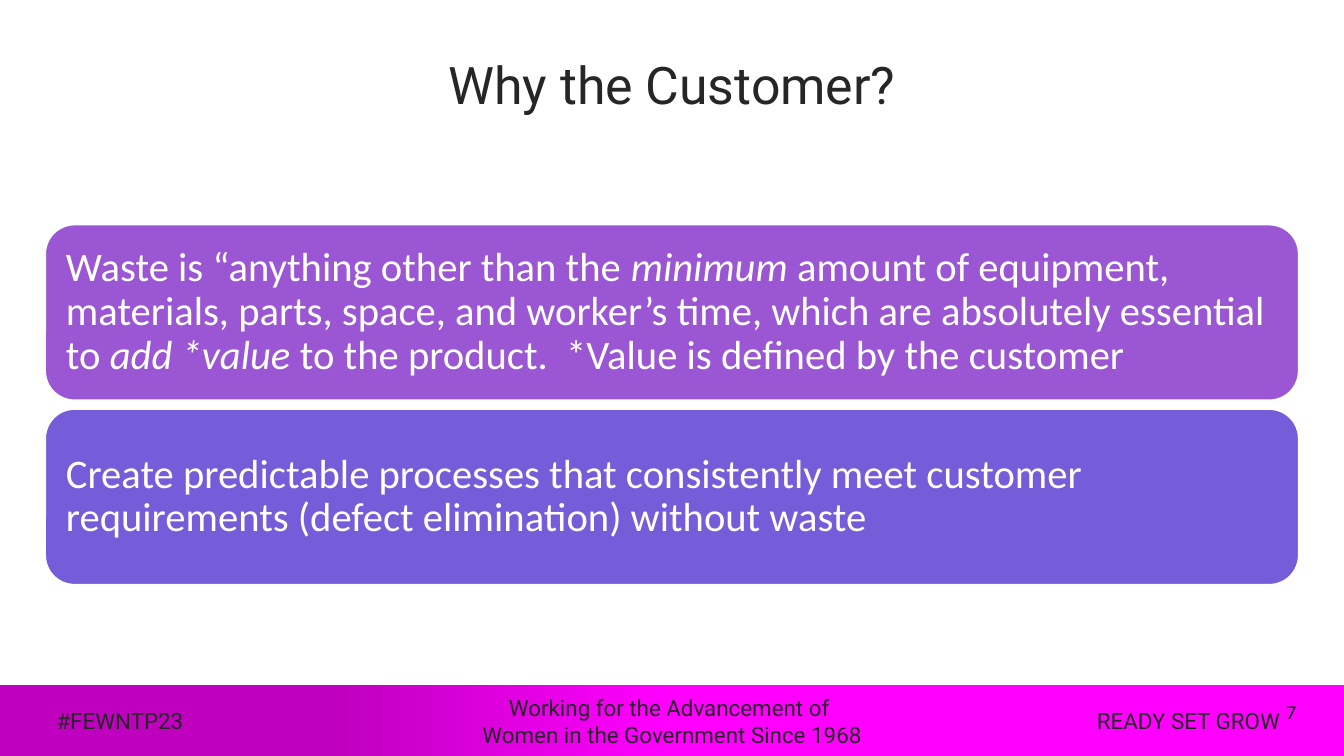
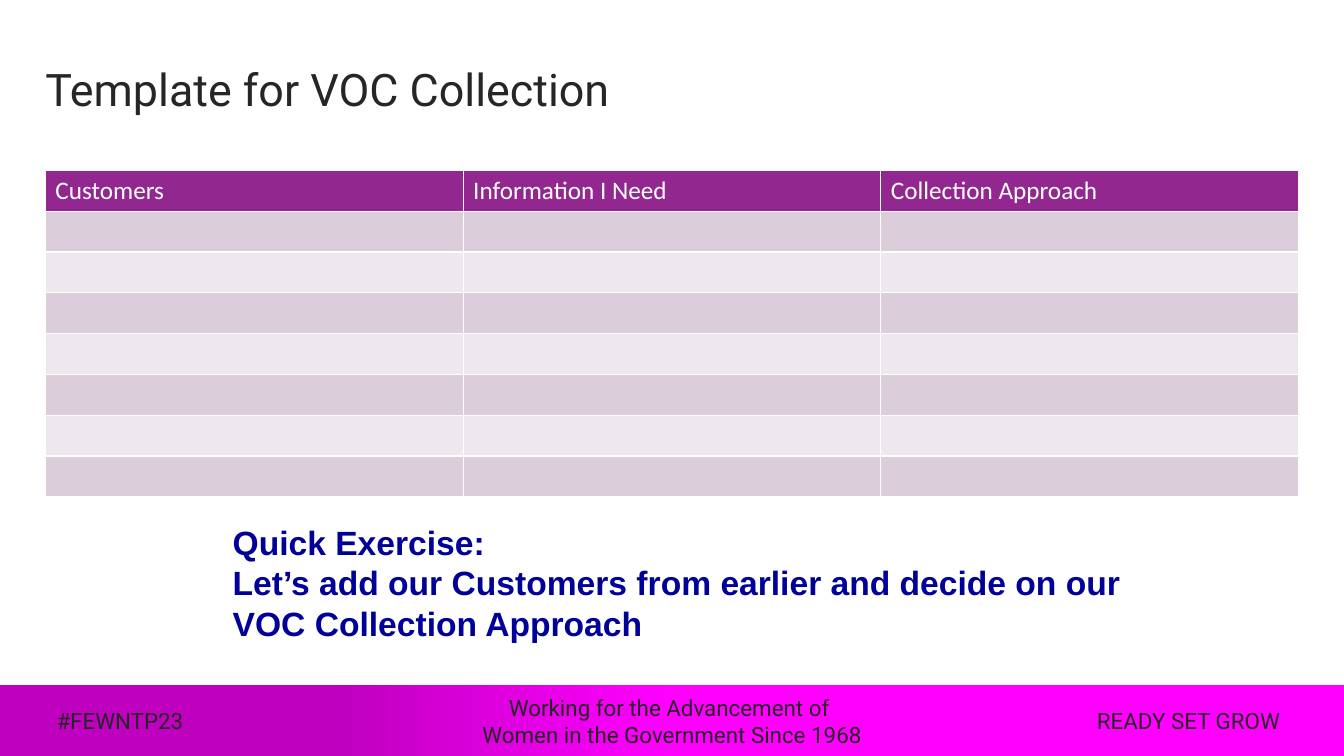
import pptx
import pptx.util
import pptx.dml.color
import pptx.enum.shapes
import pptx.enum.text
import pptx.oxml.ns
import lxml.etree

Inches, Pt = pptx.util.Inches, pptx.util.Pt
ALIGN = pptx.enum.text.PP_ALIGN
ANCHOR = pptx.enum.text.MSO_ANCHOR
SHAPE = pptx.enum.shapes.MSO_SHAPE
qn = pptx.oxml.ns.qn

LEFT, WIDTH = 0.45, 12.43
DARK, WHITE = "262626", "FFFFFF"
BAND_STOPS = [(0, "BF00BF"), (25, "BF00BF"), (50, "FF00FF"), (100, "FF00FF")]
FOOTER_FONT = {"name": "Roboto", "size": Pt(16), "color": DARK}
FOOTERS = [
    (0.36, 1.66, ALIGN.CENTER, ["#FEWNTP23"]),
    (4.39, 4.55, ALIGN.CENTER, ["Working for the Advancement of ", "Women in the Government Since 1968"]),
    (10.68, 2.29, ALIGN.LEFT, ["READY SET GROW"]),
]

CARD_FONT = {"name": "Calibri", "size": Pt(29), "color": WHITE}
CARD_TOP, CARD_HEIGHT, CARD_PITCH = 2.23, 1.74, 1.83
CARDS = [
    ("9B57D3", [
        ("Waste is “anything other than the ", False),
        ("minimum", True),
        (" amount of equipment, materials, parts, space, and worker’s time, "
         "which are absolutely essential to ", False),
        ("add *value", True),
        (" to the product.  *Value is defined by the customer", False),
    ]),
    ("755DD9", [
        ("Create predictable processes that consistently meet customer "
         "requirements (defect elimination) without waste", False),
    ]),
]
PAGE_FONT = {"name": "Calibri", "size": Pt(13.9), "color": "000000"}

HEADERS = ["Customers", "Information I Need", "Collection Approach"]
BLANK_ROWS = 7
HEADER_FILL, ROW_FILLS = "92278F", ["DCCDDB", "EEE8EE"]
TABLE_FONT = {"name": "Calibri", "size": Pt(18), "bold": False, "color": WHITE}
EXERCISE = [
    "Quick Exercise:",
    "Let’s add our Customers from earlier and decide on our VOC Collection Approach",
]
EXERCISE_FONT = {"name": "Arial", "size": Pt(24), "bold": True, "color": "000099"}


def rgb(value):
    return pptx.dml.color.RGBColor.from_string(value)


def box(left, top, width, height):
    return [Inches(v) for v in (left, top, width, height)]


def set_font(font, fmt):
    for key, value in fmt.items():
        if key == "color":
            font.color.rgb = rgb(value)
        else:
            setattr(font, key, value)


def set_frame(tf, inset, anchor, wrap=True):
    tf.word_wrap = wrap
    tf.vertical_anchor = anchor
    for side in ("left", "top", "right", "bottom"):
        setattr(tf, "margin_" + side, Inches(inset))


def write(tf, paragraphs, fmt, align=ALIGN.LEFT, line_spacing=None):
    for i, runs in enumerate(paragraphs):
        p = tf.add_paragraph() if i else tf.paragraphs[0]
        p.alignment = align
        if line_spacing:
            p.line_spacing = line_spacing
        for text, italic in ([(runs, False)] if isinstance(runs, str) else runs):
            r = p.add_run()
            r.text = text
            set_font(r.font, fmt)
            if italic:
                r.font.italic = True


def add_solid(fill, color):
    fill.solid()
    fill.fore_color.rgb = rgb(color)


def add_band(slide):
    sp = slide.shapes.add_shape(SHAPE.RECTANGLE, *box(0, 6.8, 13.33, 0.7))
    sp.shadow.inherit = False
    sp.line.fill.background()
    sp.fill.gradient()
    sp.fill.gradient_angle = 0
    stops = next(sp.element.iter(qn("a:gsLst")))
    for stop in list(stops):
        stops.remove(stop)
    for position, color in BAND_STOPS:
        stop = lxml.etree.SubElement(stops, qn("a:gs"), pos=str(position * 1000))
        lxml.etree.SubElement(stop, qn("a:srgbClr"), val=color)


def add_slide(prs, title, size, align):
    slide = prs.slides.add_slide(prs.slide_layouts[5])
    add_band(slide)
    for left, width, footer_align, lines in FOOTERS:
        tf = slide.shapes.add_textbox(*box(left, 6.94, width, 0.42)).text_frame
        set_frame(tf, 0.2, ANCHOR.MIDDLE, wrap=False)
        write(tf, lines, FOOTER_FONT, footer_align)
    sp = slide.shapes.title
    sp.left, sp.top, sp.width, sp.height = box(LEFT, 0.31, WIDTH, 0.84)
    sp.text_frame.auto_size = pptx.enum.text.MSO_AUTO_SIZE.NONE
    set_frame(sp.text_frame, 0, ANCHOR.BOTTOM)
    fmt = {"name": "Roboto", "size": Pt(size), "color": DARK}
    write(sp.text_frame, [title], fmt, align, 0.9)
    return slide


def add_cards(slide):
    for i, (color, runs) in enumerate(CARDS):
        top = CARD_TOP + i * CARD_PITCH
        sp = slide.shapes.add_shape(SHAPE.ROUNDED_RECTANGLE, *box(LEFT, top, WIDTH, CARD_HEIGHT))
        sp.shadow.inherit = False
        add_solid(sp.fill, color)
        sp.line.color.rgb = rgb(WHITE)
        sp.line.width = Pt(1)
        set_frame(sp.text_frame, 0.12, ANCHOR.MIDDLE)
        write(sp.text_frame, [runs], CARD_FONT, line_spacing=0.9)


def add_borders(cell):
    tc_pr = cell._tc.get_or_add_tcPr()
    for i, side in enumerate(("lnL", "lnR", "lnT", "lnB")):
        line = lxml.etree.Element(qn("a:" + side), w=str(Pt(1)))
        fill = lxml.etree.SubElement(line, qn("a:solidFill"))
        lxml.etree.SubElement(fill, qn("a:srgbClr"), val=WHITE)
        tc_pr.insert(i, line)


def add_collection_table(slide):
    frame = slide.shapes.add_table(BLANK_ROWS + 1, len(HEADERS), *box(LEFT, 1.69, WIDTH, 3.24))
    for i, row in enumerate(frame.table.rows):
        for j, cell in enumerate(row.cells):
            add_solid(cell.fill, ROW_FILLS[(i - 1) % 2] if i else HEADER_FILL)
            add_borders(cell)
            if i:
                set_font(cell.text_frame.paragraphs[0].font, {"size": Pt(18)})
            else:
                write(cell.text_frame, [HEADERS[j]], TABLE_FONT)


def main():
    prs = pptx.Presentation()
    prs.slide_width, prs.slide_height = Inches(13.33), Inches(7.5)

    slide = add_slide(prs, "Why the Customer?", 37, ALIGN.CENTER)
    add_cards(slide)
    tf = slide.shapes.add_textbox(*box(12.66, 6.9, 0.68, 0.3)).text_frame
    tf.word_wrap = True
    write(tf, ["7"], PAGE_FONT)

    slide = add_slide(prs, "Template for VOC Collection", 32, ALIGN.LEFT)
    add_collection_table(slide)
    tf = slide.shapes.add_textbox(*box(2.21, 5.13, 9.33, 1.31)).text_frame
    tf.word_wrap = True
    write(tf, EXERCISE, EXERCISE_FONT)

    prs.save("out.pptx")


if __name__ == "__main__":
    main()
